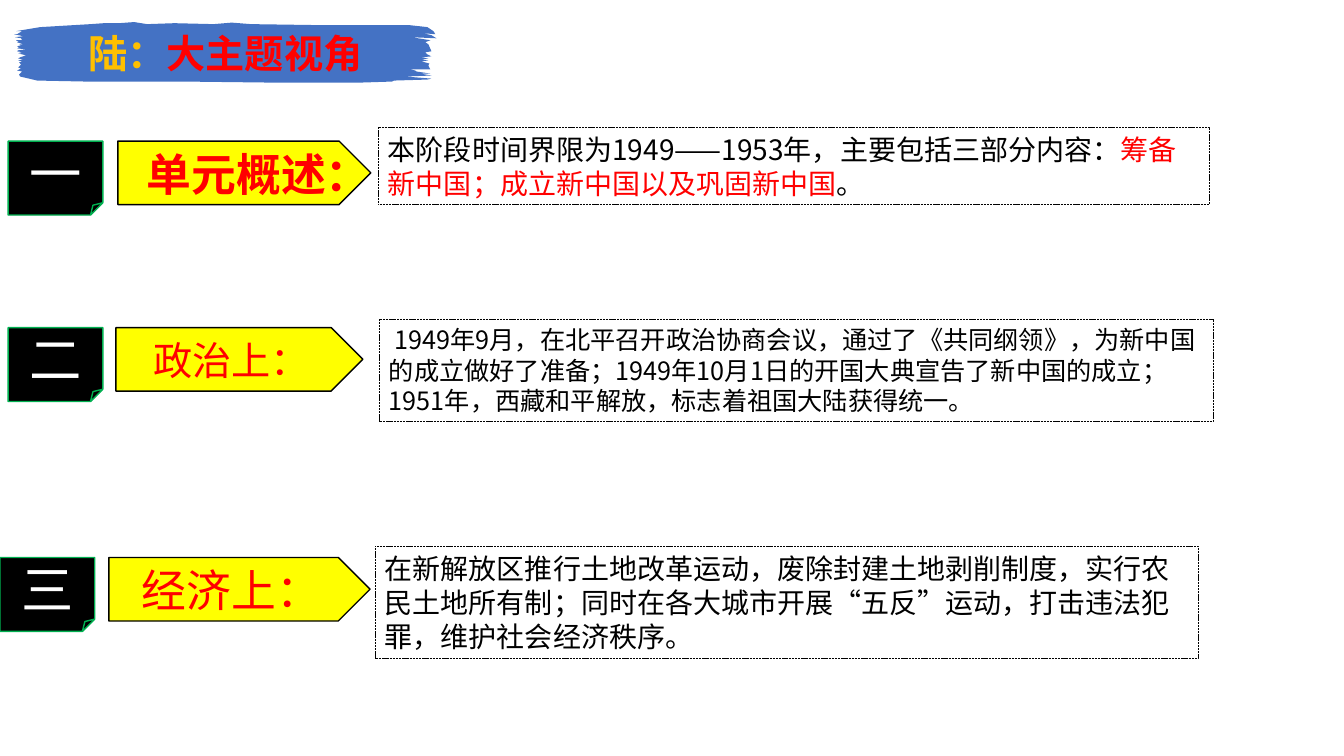
from lxml import etree
from pptx import Presentation
from pptx import util as u
from pptx.dml.color import RGBColor
from pptx.enum import dml, shapes, text
from pptx.oxml import ns

FONT = "Noto Sans CJK SC"
LINE_RATIO = 1.21
COLORS = {
    "black": "000000", "white": "FFFFFF", "red": "FF0000", "yellow": "FFFF00",
    "gold": "FFC000", "green": "00B050", "blue": "4472C4",
}

# Brush stroke outline, in tenths of a point
BRUSH_LEFT = [
    (108, 266), (151, 274), (158, 288), (115, 288), (137, 302), (122, 302),
    (166, 317), (137, 317), (151, 324), (122, 331), (137, 338), (122, 346),
    (187, 353), (130, 360), (122, 367), (166, 374), (137, 374), (158, 382),
    (130, 382), (187, 396), (144, 410), (130, 418), (166, 425), (130, 432),
    (158, 439), (137, 446), (151, 461), (130, 482), (151, 490), (122, 504),
    (158, 511), (137, 533), (144, 547), (266, 576),
]
BRUSH_BOTTOM = [
    (612, 583), (1310, 583), (1915, 590), (2585, 590), (2801, 583),
    (2815, 576), (3053, 569), (3082, 562),
]
BRUSH_RIGHT = [
    (2894, 547), (3082, 540), (3002, 526), (3074, 526), (2974, 511),
    (2966, 504), (2930, 497), (3074, 497), (3060, 468), (3067, 454),
    (3010, 439), (3060, 432), (3010, 425), (3060, 418), (3010, 410),
    (3082, 403), (3053, 389), (3038, 374), (3082, 367), (3060, 317),
    (3038, 302), (3074, 288), (2938, 266), (3118, 274), (3082, 252),
    (3024, 238), (3110, 245), (3096, 223), (3053, 194),
]
BRUSH_TOP = [
    (2923, 180), (2282, 180), (1793, 173), (1656, 162), (1526, 173),
    (1246, 166), (1051, 173), (958, 158), (850, 166), (742, 166), (648, 173),
    (288, 194), (115, 223), (158, 223), (122, 245), (101, 245), (166, 259),
]

# Each row: numeral, heading and statement, with their places in points
ROWS = [
    {
        "numeral": "一", "numeral_at": (5.8, 100.8),
        "heading": "单元概述：", "heading_at": (84.2, 100.8, 180.7),
        "heading_size": 32, "heading_bold": True,
        "statement": [
            ("本阶段时间界限为1949——1953年，主要包括三部分内容：", "black"),
            ("筹备新中国；成立新中国以及巩固新中国", "red"),
            ("。", "black"),
        ],
        "statement_at": (270, 90.7, 594, 55.4), "statement_size": 20, "indent": 0,
    },
    {
        "numeral": "二", "numeral_at": (5.8, 234),
        "heading": "政治上：", "heading_at": (82.8, 234, 176.4),
        "heading_size": 28, "heading_bold": False,
        "statement": [
            ("1949年9月，在北平召开政治协商会议，通过了《共同纲领》，"
             "为新中国的成立做好了准备；1949年10月1日的开国大典宣告了"
             "新中国的成立；1951年，西藏和平解放，标志着祖国大陆获得统一。", "black"),
        ],
        "statement_at": (270.7, 228.2, 596.2, 72.7), "statement_size": 18, "indent": 4,
    },
    {
        "numeral": "三", "numeral_at": (0, 398.2),
        "heading": "经济上：", "heading_at": (77.8, 398.2, 186.5),
        "heading_size": 32, "heading_bold": False,
        "statement": [
            ("在新解放区推行土地改革运动，废除封建土地剥削制度，"
             "实行农民土地所有制；同时在各大城市开展“五反”运动，"
             "打击违法犯罪，维护社会经济秩序。", "black"),
        ],
        "statement_at": (267.8, 390.2, 588.2, 79.9), "statement_size": 20, "indent": 0,
    },
]


def rgb(name):
    return RGBColor.from_string(COLORS[name])


def write(shape, runs, size, bold=False, align=text.PP_ALIGN.CENTER,
          anchor=text.MSO_ANCHOR.MIDDLE, indent=0):
    """Fill a shape with one paragraph of (wording, colour) runs."""
    frame = shape.text_frame
    frame.word_wrap = True
    frame.vertical_anchor = anchor
    paragraph = frame.paragraphs[0]
    paragraph.alignment = align
    paragraph.line_spacing = u.Pt(round(size * LINE_RATIO, 1))
    if indent:
        paragraph._p.get_or_add_pPr().set("indent", str(u.Pt(indent)))
    for wording, color in runs:
        run = paragraph.add_run()
        run.text = wording
        run.font.size = u.Pt(size)
        run.font.bold = bold
        run.font.color.rgb = rgb(color)
        run.font.name = FONT
        east_asian = etree.SubElement(run.font._element, ns.qn("a:ea"))
        east_asian.set("typeface", FONT)


def paint(shape, fill, line=None, width=1.0):
    shape.shadow.inherit = False
    shape.fill.solid()
    shape.fill.fore_color.rgb = rgb(fill)
    if line:
        shape.line.color.rgb = rgb(line)
        shape.line.width = u.Pt(width)
    else:
        shape.line.fill.background()


def add_box(slide, kind, at, fill, line, width=1.0):
    box = slide.shapes.add_shape(kind, *(u.Pt(length) for length in at))
    paint(box, fill, line, width)
    return box


def add_title(slide):
    outline = BRUSH_LEFT + BRUSH_BOTTOM + BRUSH_RIGHT + BRUSH_TOP
    builder = slide.shapes.build_freeform(*outline[0], scale=u.Pt(1) / 10)
    builder.add_line_segments(outline[1:], close=True)
    brush = builder.convert_to_shape()
    paint(brush, "blue")
    write(brush, [("陆：", "gold"), ("大主题视角", "red")], 28, bold=True)


def add_numeral(slide, row):
    card = add_box(slide, shapes.MSO_SHAPE.FOLDED_CORNER,
                   (*row["numeral_at"], 67.7, 52.8), "black", "green")
    write(card, [(row["numeral"], "white")], 37.4)


def add_heading(slide, row):
    arrow = add_box(slide, shapes.MSO_SHAPE.PENTAGON,
                    (*row["heading_at"], 45.4), "yellow", "black")
    write(arrow, [(row["heading"], "red")], row["heading_size"],
          bold=row["heading_bold"])


def add_statement(slide, row):
    panel = add_box(slide, shapes.MSO_SHAPE.RECTANGLE,
                    row["statement_at"], "white", "black", 0.5)
    panel.line.dash_style = dml.MSO_LINE.SQUARE_DOT
    write(panel, row["statement"], row["statement_size"],
          align=text.PP_ALIGN.LEFT, anchor=text.MSO_ANCHOR.TOP,
          indent=row["indent"])


def main():
    deck = Presentation()
    deck.slide_width, deck.slide_height = u.Pt(960), u.Pt(540)
    slide = deck.slides.add_slide(deck.slide_layouts[6])

    add_title(slide)
    for row in ROWS:
        add_numeral(slide, row)
        add_heading(slide, row)
        add_statement(slide, row)

    deck.save("out.pptx")


if __name__ == "__main__":
    main()
